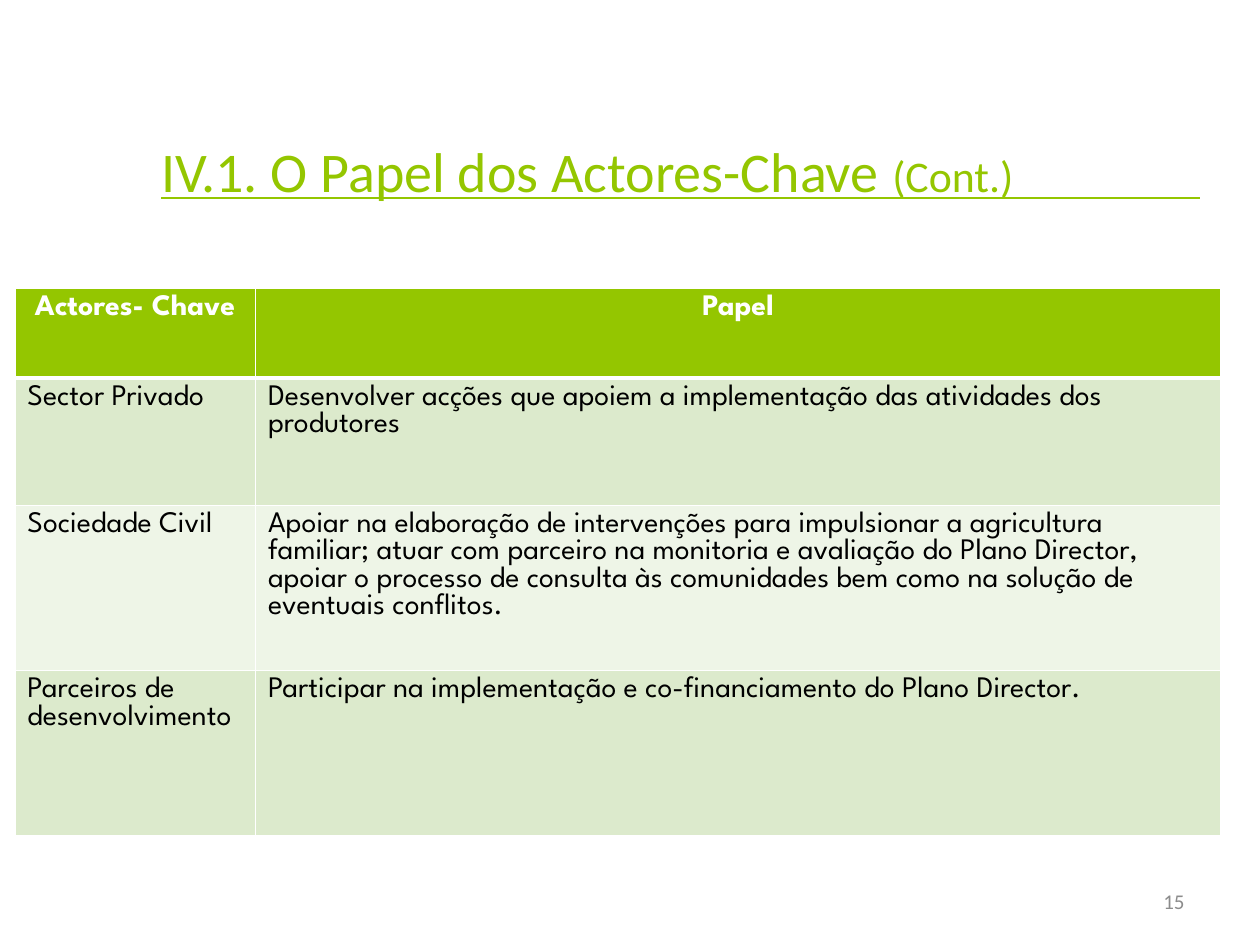
from lxml import etree
from pptx import Presentation
from pptx import util as u
from pptx.dml.color import RGBColor
from pptx.enum import shapes, text
from pptx.oxml.ns import qn

THEME = {
    "accent": "94C600", "white": "FFFFFF", "ink": "000000", "muted": "8C8C8C",
    "bands": ("DCEACC", "EEF5E7"),
    "heading_font": "Calibri", "table_font": "League Spartan",
    "title_size": 32, "suffix_size": 25, "table_size": 17, "number_size": 12,
}
TITLE, TITLE_SUFFIX = "IV.1. O Papel dos Actores-Chave ", "(Cont.)"
PAGE_NUMBER = "15"
HEADER = ("Actores- Chave", "Papel")
ACTORS = [
    ("Sector Privado",
     "Desenvolver acções que apoiem a implementação das atividades dos produtores"),
    ("Sociedade Civil",
     "Apoiar na elaboração de intervenções para impulsionar a agricultura familiar; "
     "atuar com parceiro na monitoria e avaliação do Plano Director, apoiar o processo "
     "de consulta às comunidades bem como na solução de eventuais conflitos."),
    ("Parceiros de desenvolvimento",
     "Participar na implementação e co-financiamento do Plano Director."),
]
COLUMN_WIDTHS = (4.85, 19.46)
ROW_HEIGHTS = (1.8, 2.57, 3.33, 3.33)


def write(paragraph, words, *, size, color, font, bold=False, align=text.PP_ALIGN.LEFT):
    paragraph.alignment = align
    run = paragraph.add_run()
    run.text = words
    run.font.size = u.Pt(size)
    run.font.name = font
    run.font.bold = bold
    run.font.color.rgb = RGBColor.from_string(color)


def add_text_frame(slide, left, top, width, height, anchor):
    frame = slide.shapes.add_textbox(*map(u.Cm, (left, top, width, height))).text_frame
    frame.word_wrap = True
    frame.vertical_anchor = anchor
    return frame


def border(cell, widths):
    """Draw white borders; widths are points for left, right, top and bottom."""
    properties = cell._tc.get_or_add_tcPr()
    for side, width in zip("LRTB", widths):
        line = etree.SubElement(properties, qn(f"a:ln{side}"), w=str(u.Pt(width)))
        fill = etree.SubElement(line, qn("a:solidFill"))
        etree.SubElement(fill, qn("a:srgbClr"), val=THEME["white"])


def add_actor_table(slide):
    rows = [HEADER, *ACTORS]
    table = slide.shapes.add_table(
        len(rows), len(HEADER), u.Cm(0.3), u.Cm(5.82),
        u.Cm(sum(COLUMN_WIDTHS)), u.Cm(sum(ROW_HEIGHTS))).table
    for column, width in zip(table.columns, COLUMN_WIDTHS):
        column.width = u.Cm(width)
    for r, (row, height) in enumerate(zip(rows, ROW_HEIGHTS)):
        table.rows[r].height = u.Cm(height)
        is_header = r == 0
        for c, words in enumerate(row):
            cell = table.cell(r, c)
            border(cell, (1, 1, 3 if r == 1 else 1, 3 if is_header else 1))
            cell.fill.solid()
            cell.fill.fore_color.rgb = RGBColor.from_string(
                THEME["accent"] if is_header else THEME["bands"][(r - 1) % 2])
            write(cell.text_frame.paragraphs[0], words,
                  size=THEME["table_size"], font=THEME["table_font"], bold=is_header,
                  color=THEME["white" if is_header else "ink"],
                  align=text.PP_ALIGN.CENTER if is_header else text.PP_ALIGN.LEFT)


def add_title_rule(slide):
    rule = slide.shapes.add_connector(
        shapes.MSO_CONNECTOR.STRAIGHT, *map(u.Cm, (3.25, 3.99, 24.2, 3.99)))
    rule.line.color.rgb = RGBColor.from_string(THEME["accent"])
    rule.line.width = u.Pt(1.25)
    etree.SubElement(rule._element.spPr, qn("a:effectLst"))


def main():
    deck = Presentation()
    deck.slide_width, deck.slide_height = u.Cm(25.4), u.Cm(19.05)
    slide = deck.slides.add_slide(deck.slide_layouts[6])

    add_title_rule(slide)
    add_actor_table(slide)

    title = add_text_frame(slide, 3, 1.9, 22.86, 2.34, text.MSO_ANCHOR.BOTTOM).paragraphs[0]
    for words, size in ((TITLE, "title_size"), (TITLE_SUFFIX, "suffix_size")):
        write(title, words, size=THEME[size], color=THEME["accent"],
              font=THEME["heading_font"])

    number = add_text_frame(slide, 18.2, 17.66, 5.93, 1.01, text.MSO_ANCHOR.MIDDLE)
    write(number.paragraphs[0], PAGE_NUMBER, size=THEME["number_size"],
          color=THEME["muted"], font=THEME["heading_font"], align=text.PP_ALIGN.RIGHT)

    deck.save("out.pptx")


if __name__ == "__main__":
    main()
